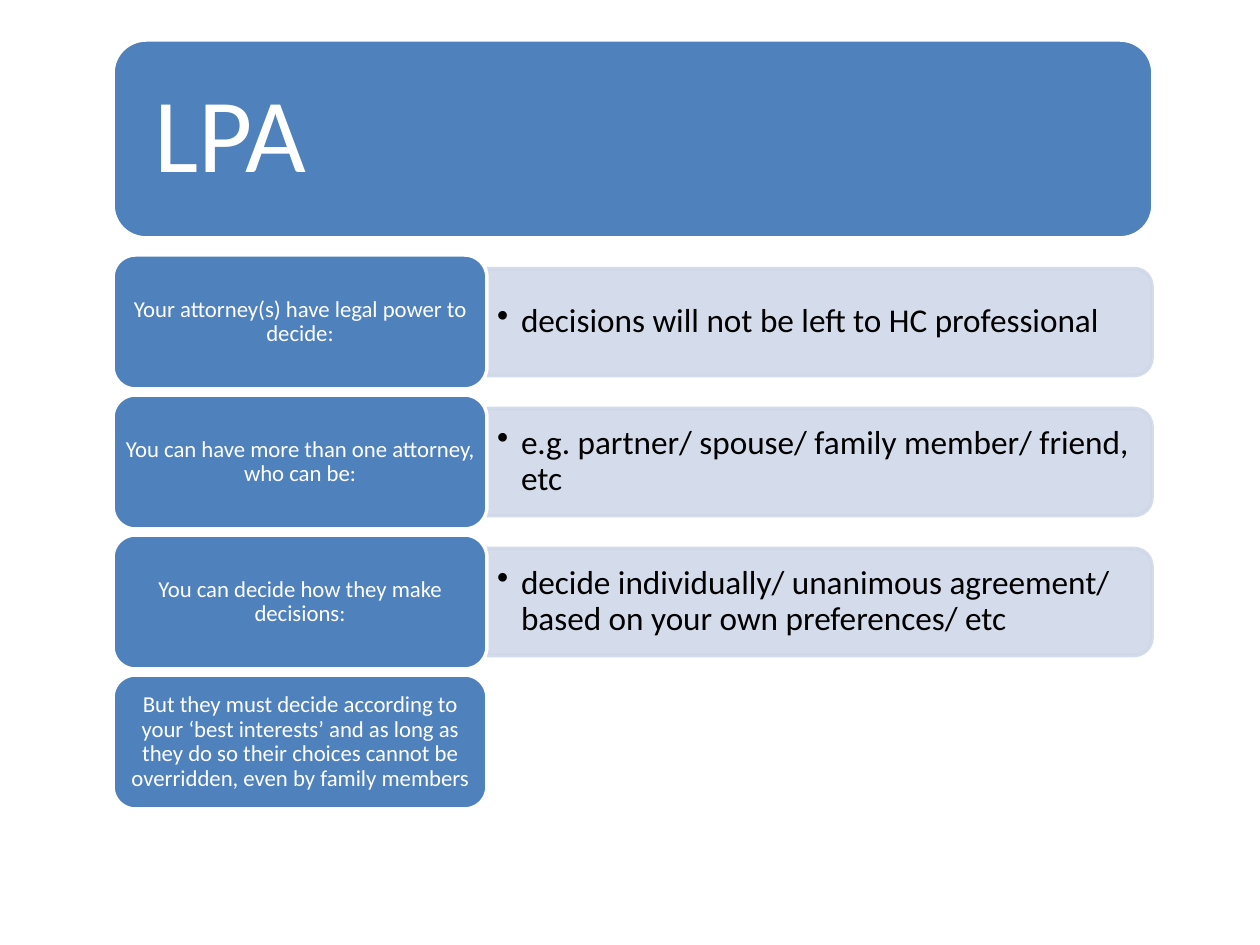
from dataclasses import dataclass

from lxml.etree import SubElement
from pptx import Presentation
from pptx.dml.color import RGBColor
from pptx.enum.shapes import MSO_SHAPE as Shape
from pptx.enum.text import MSO_ANCHOR as Anchor, PP_ALIGN as Align
from pptx.oxml.ns import qn
from pptx.util import Emu, Pt

TITLE = "LPA"
ROWS = [
    ("Your attorney(s) have legal power to decide:",
     "decisions will not be left to HC professional"),
    ("You can have more than one attorney, who can be:",
     "e.g. partner/ spouse/ family member/ friend, etc"),
    ("You can decide how they make decisions:",
     "decide individually/ unanimous agreement/ based on your own preferences/ etc"),
    ("But they must decide according to your ‘best interests’ and as long as "
     "they do so their choices cannot be overridden, even by family members", None),
]


@dataclass(frozen=True)
class Theme:
    font: str = "Calibri"
    blue: str = "4F81BD"
    pale: str = "D0D8E8"
    white: str = "FFFFFF"
    black: str = "000000"
    title_size: int = 60
    label_size: int = 13
    detail_size: int = 19
    line_width: int = 2
    pale_alpha: int = 90


THEME = Theme()
PX_PER_INCH = 126
SLIDE_SIZE = (1260, 945)
LEFT = 113
TITLE_BOX = (LEFT, 40, 1040, 198)
FIRST_TOP, ROW_PITCH = 255, 140
LABEL_WIDTH, LABEL_HEIGHT = 374, 134
BAR_WIDTH, BAR_HEIGHT = 665, 107
DETAIL_WIDTH, DETAIL_HEIGHT = 660, 96
BULLET_INDENT = 24


def px(value):
    return Emu(round(value * 914400 / PX_PER_INCH))


def set_alpha(color_format, percent):
    """Make a solid fill partly transparent."""
    color = color_format._xPr.find(qn("a:solidFill"))[0]
    SubElement(color, qn("a:alpha"), val=str(percent * 1000))


def add_block(page, kind, box, fill, line):
    block = page.shapes.add_shape(kind, *map(px, box))
    block.shadow.inherit = False
    block.fill.solid()
    block.fill.fore_color.rgb = RGBColor.from_string(fill)
    block.line.color.rgb = RGBColor.from_string(line)
    block.line.width = Pt(THEME.line_width)
    return block


def write(box, text, *, size, color, inset, align=Align.LEFT, bullet=False):
    frame = box.text_frame
    frame.word_wrap = True
    frame.vertical_anchor = Anchor.MIDDLE
    frame.margin_left = frame.margin_right = px(inset[0])
    frame.margin_top = frame.margin_bottom = px(inset[1])
    para = frame.paragraphs[0]
    para.alignment = align
    para.line_spacing = 0.9
    if bullet:
        props = para._p.get_or_add_pPr()
        props.set("marL", str(px(BULLET_INDENT)))
        props.set("indent", str(-px(BULLET_INDENT)))
        SubElement(props, qn("a:buChar"), char="•")
    span = para.add_run()
    span.text = text
    span.font.name = THEME.font
    span.font.size = Pt(size)
    span.font.color.rgb = RGBColor.from_string(color)


def add_detail(page, left, middle, text):
    """Draw a pale bar rounded on its right side, with one bullet over it."""
    # The bar is drawn upright, then turned a quarter about its centre.
    upright = (left + (BAR_WIDTH - BAR_HEIGHT) / 2, middle - BAR_WIDTH / 2,
               BAR_HEIGHT, BAR_WIDTH)
    bar = add_block(page, Shape.ROUND_2_SAME_RECTANGLE, upright, THEME.pale, THEME.pale)
    bar.rotation = 90
    sp_pr = bar._element.spPr
    for parent in (sp_pr, sp_pr.find(qn("a:ln"))):
        color = parent.find(qn("a:solidFill"))[0]
        SubElement(color, qn("a:alpha"), val=str(THEME.pale_alpha * 1000))
    box = page.shapes.add_textbox(px(left), px(middle - DETAIL_HEIGHT / 2),
                                  px(DETAIL_WIDTH), px(DETAIL_HEIGHT))
    write(box, text, size=THEME.detail_size, color=THEME.black,
          inset=(10, 5), bullet=True)


def main():
    deck = Presentation()
    deck.slide_width, deck.slide_height = map(px, SLIDE_SIZE)
    page = deck.slides.add_slide(deck.slide_layouts[6])

    title = add_block(page, Shape.ROUNDED_RECTANGLE, TITLE_BOX, THEME.blue, THEME.white)
    write(title, TITLE, size=THEME.title_size, color=THEME.white, inset=(32, 32))

    for index, (label_text, detail_text) in enumerate(ROWS):
        top = FIRST_TOP + index * ROW_PITCH
        if detail_text:
            add_detail(page, LEFT + LABEL_WIDTH, top + LABEL_HEIGHT / 2, detail_text)
        label = add_block(page, Shape.ROUNDED_RECTANGLE,
                          (LEFT, top, LABEL_WIDTH, LABEL_HEIGHT), THEME.blue, THEME.white)
        write(label, label_text, size=THEME.label_size, color=THEME.white,
              inset=(6, 4), align=Align.CENTER)

    deck.save("out.pptx")


if __name__ == "__main__":
    main()
